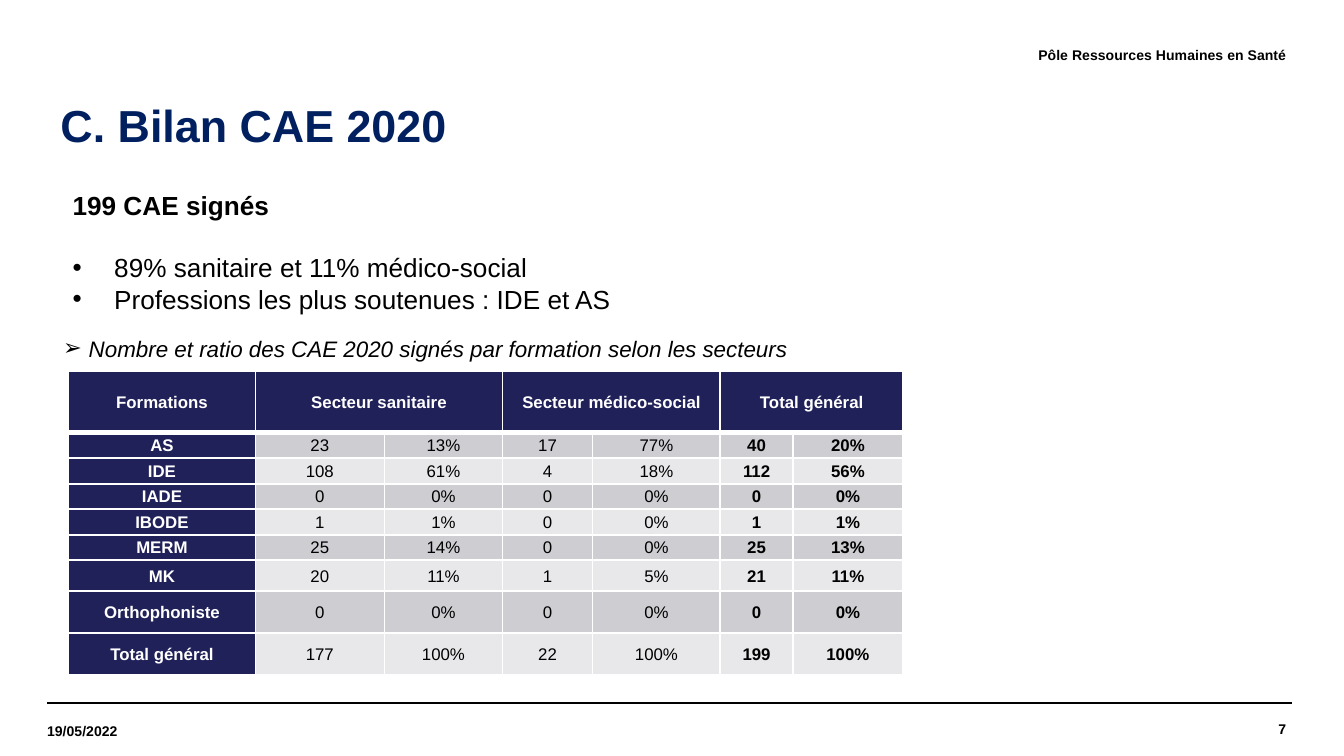
from lxml.etree import SubElement
from pptx import Presentation
from pptx.dml.color import RGBColor
from pptx.enum.shapes import MSO_CONNECTOR
from pptx.enum.text import MSO_ANCHOR, MSO_AUTO_SIZE, PP_ALIGN
from pptx.oxml.ns import qn
from pptx.util import Inches, Pt

SLIDE_WIDTH = Inches(10)
SLIDE_HEIGHT = SLIDE_WIDTH * 9 // 16

FONT = "Arial"
BLACK, WHITE = "000000", "FFFFFF"
TITLE_BLUE, TABLE_BLUE = "002060", "21215A"
BANDS = ["CDCDD2", "E8E8EA"]

TITLE = "C. Bilan CAE 2020"
KEY_FIGURE = "199 CAE signés"
FINDINGS = [
    "89% sanitaire et 11% médico-social",
    "Professions les plus soutenues : IDE et AS",
]
CAPTION = "Nombre et ratio des CAE 2020 signés par formation selon les secteurs"

# Text, (left, top, width, height), alignment
PAGE_LABELS = [
    ("7", (8.09, 5.23, 1.48, 0.39), PP_ALIGN.RIGHT),
    ("19/05/2022", (0.35, 5.25, 1.28, 0.38), PP_ALIGN.LEFT),
    ("Pôle Ressources Humaines en Santé", (3.14, 0.21, 6.43, 0.39), PP_ALIGN.RIGHT),
]
FOOTER_LINES = [(0.35, 9.57), (0.39, 9.61)]
FOOTER_LINE_TOP = 5.23

HEADERS = ["Formations", "Secteur sanitaire", "", "Secteur médico-social", "", "Total général", ""]
ROWS = [
    ["AS", "23", "13%", "17", "77%", "40", "20%"],
    ["IDE", "108", "61%", "4", "18%", "112", "56%"],
    ["IADE", "0", "0%", "0", "0%", "0", "0%"],
    ["IBODE", "1", "1%", "0", "0%", "1", "1%"],
    ["MERM", "25", "14%", "0", "0%", "25", "13%"],
    ["MK", "20", "11%", "1", "5%", "21", "11%"],
    ["Orthophoniste", "0", "0%", "0", "0%", "0", "0%"],
    ["Total général", "177", "100%", "22", "100%", "199", "100%"],
]
COLUMN_WIDTHS = [1.39, 0.96, 0.88, 0.67, 0.95, 0.54, 0.82]
ROW_HEIGHTS = [0.46] + [0.19] * 5 + [0.23, 0.31, 0.31]
TOTAL_COLUMN = 5


def color(value):
    return RGBColor.from_string(value)


def add_run(paragraph, text, size, fill=BLACK, bold=False, italic=False):
    run = paragraph.add_run()
    run.text = text
    font = run.font
    font.name, font.size, font.bold, font.italic = FONT, Pt(size), bold, italic
    font.color.rgb = color(fill)


def place(shape, box, anchor=MSO_ANCHOR.TOP, inset=None):
    """Position a text shape and return its frame, ready for text."""
    shape.left, shape.top, shape.width, shape.height = map(Inches, box)
    frame = shape.text_frame
    frame.word_wrap = True
    frame.auto_size = MSO_AUTO_SIZE.NONE
    frame.vertical_anchor = anchor
    if inset is not None:
        frame.margin_left = frame.margin_right = Inches(inset)
        frame.margin_top = frame.margin_bottom = Inches(inset)
    return frame


def set_bullet(paragraph, margin, indent=0, character=None):
    """Set the indents and the bullet; no character means no bullet."""
    properties = paragraph._p.get_or_add_pPr()
    properties.set("marL", str(Inches(margin)))
    properties.set("indent", str(Inches(indent)))
    if character:
        SubElement(properties, qn("a:buFont"), typeface=FONT)
        SubElement(properties, qn("a:buChar"), char=character)
    else:
        SubElement(properties, qn("a:buNone"))
    paragraph.space_before = Pt(0)


def set_border(cell, side, width):
    line = SubElement(cell._tc.get_or_add_tcPr(), qn(f"a:ln{side}"), w=str(Pt(width)))
    SubElement(SubElement(line, qn("a:solidFill")), qn("a:srgbClr"), val=WHITE)


def format_cell(cell, text, row, column):
    heading = row == 0 or column == 0
    heavy_side = {0: "B", 1: "T"}.get(row)
    for side in "LRTB":
        set_border(cell, side, 3 if side == heavy_side else 1)
    cell.fill.solid()
    cell.fill.fore_color.rgb = color(TABLE_BLUE if heading else BANDS[(row - 1) % 2])
    cell.vertical_anchor = MSO_ANCHOR.MIDDLE
    cell.margin_left = cell.margin_right = Inches(0.05)
    cell.margin_top = cell.margin_bottom = 0
    if text:
        paragraph = cell.text_frame.paragraphs[0]
        paragraph.alignment = PP_ALIGN.CENTER
        paragraph.line_spacing = 1.07
        add_run(paragraph, text, 9, WHITE if heading else BLACK,
                bold=heading or column >= TOTAL_COLUMN)


def add_page_frame(slide):
    for start, end in FOOTER_LINES:
        line = slide.shapes.add_connector(
            MSO_CONNECTOR.STRAIGHT, Inches(start), Inches(FOOTER_LINE_TOP),
            Inches(end), Inches(FOOTER_LINE_TOP))
        line.line.color.rgb = color(BLACK)
        line.line.width = Pt(0.8)
        SubElement(line._element.spPr, qn("a:effectLst"))
    for text, box, alignment in PAGE_LABELS:
        label = slide.shapes.add_textbox(0, 0, 0, 0)
        paragraph = place(label, box, MSO_ANCHOR.MIDDLE, inset=0).paragraphs[0]
        paragraph.alignment = alignment
        add_run(paragraph, text, 7.5, bold=True)


def add_texts(slide):
    title, findings, caption = slide.placeholders

    paragraph = place(title, (0.35, 0.68, 8.98, 0.5)).paragraphs[0]
    paragraph.alignment = PP_ALIGN.LEFT
    add_run(paragraph, TITLE, 24, TITLE_BLUE, bold=True)

    frame = place(findings, (0.34, 1.36, 7.72, 1.04))
    paragraph = frame.paragraphs[0]
    set_bullet(paragraph, 0.1)
    paragraph.space_after = Pt(16.5)
    add_run(paragraph, KEY_FIGURE, 14, bold=True)
    for finding in FINDINGS:
        paragraph = frame.add_paragraph()
        set_bullet(paragraph, 0.41, -0.31, "•")
        add_run(paragraph, finding, 14)

    paragraph = place(caption, (0.37, 2.49, 6.94, 0.22), inset=0).paragraphs[0]
    set_bullet(paragraph, 0.29, -0.19, "➢")
    paragraph.space_after = Pt(5)
    add_run(paragraph, CAPTION, 12, italic=True)


def add_training_table(slide):
    table = slide.shapes.add_table(
        len(ROW_HEIGHTS), len(COLUMN_WIDTHS), Inches(0.51), Inches(2.76),
        Inches(sum(COLUMN_WIDTHS)), Inches(sum(ROW_HEIGHTS))).table
    for column, width in zip(table.columns, COLUMN_WIDTHS):
        column.width = Inches(width)
    for row, height in zip(table.rows, ROW_HEIGHTS):
        row.height = Inches(height)
    for row, values in enumerate([HEADERS] + ROWS):
        for column, text in enumerate(values):
            format_cell(table.cell(row, column), text, row, column)
    for column in (1, 3, 5):
        table.cell(0, column).merge(table.cell(0, column + 1))


def main():
    presentation = Presentation()
    presentation.slide_width, presentation.slide_height = SLIDE_WIDTH, SLIDE_HEIGHT
    two_content_layout = presentation.slide_layouts[3]
    slide = presentation.slides.add_slide(two_content_layout)
    add_page_frame(slide)
    add_texts(slide)
    add_training_table(slide)
    presentation.save("out.pptx")


if __name__ == "__main__":
    main()
